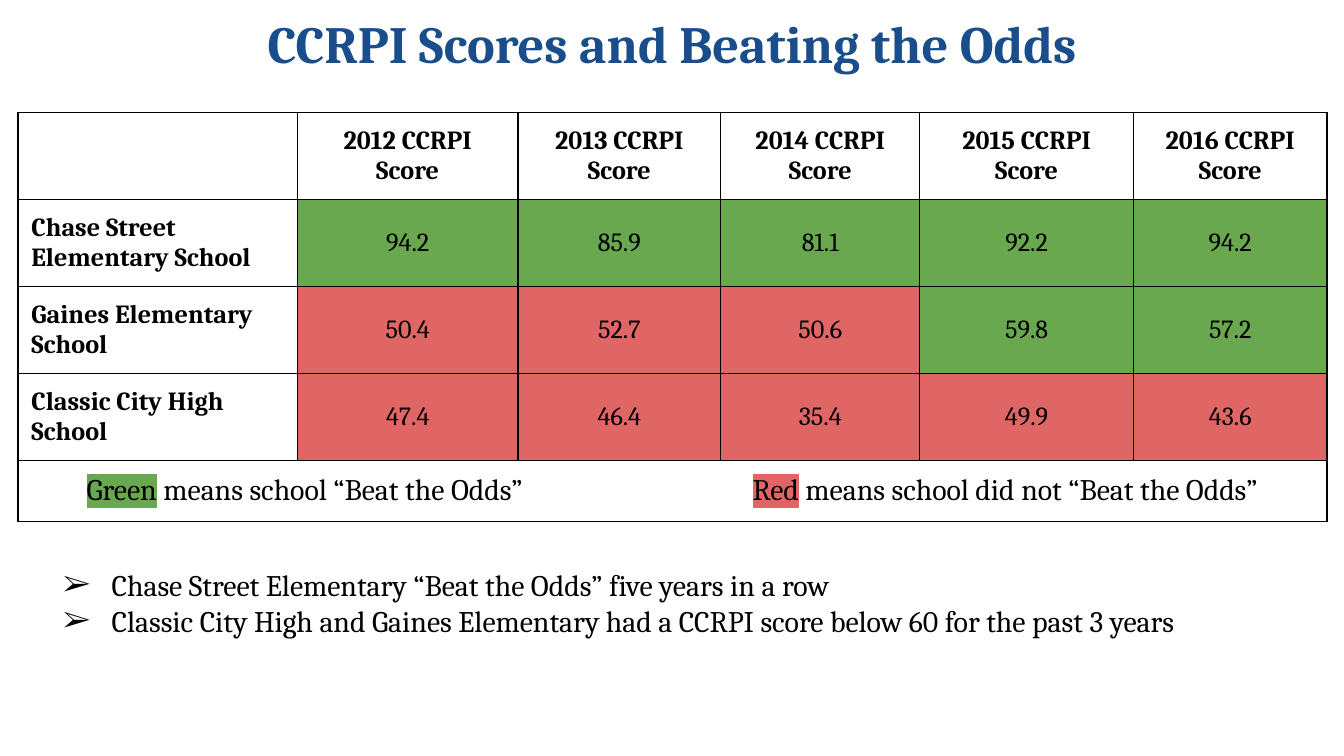
from dataclasses import dataclass

from lxml import etree
from pptx import Presentation
from pptx import util as u
from pptx.dml.color import RGBColor
from pptx.enum import text
from pptx.oxml import ns

FONT = "Cambria"
COLORS = {"title": "194D8C", "ink": "000000", "green": "6AA84F", "red": "E06666"}
INSET = u.Pt(7.2)
MIDDLE = text.MSO_ANCHOR.MIDDLE
CENTER, LEFT = text.PP_ALIGN.CENTER, text.PP_ALIGN.LEFT


@dataclass
class Style:
    size: float
    bold: bool = False
    color: str = "ink"


@dataclass
class School:
    name: str
    scores: list[float]
    beat_odds: list[bool]


@dataclass
class Legend:
    word: str
    meaning: str
    color: str


HEADING, LABEL, SCORE, NOTE = Style(28, True, "title"), Style(14, True), Style(14), Style(16)
YEARS = range(2012, 2017)
SCHOOLS = [
    School("Chase Street Elementary School", [94.2, 85.9, 81.1, 92.2, 94.2], [True] * 5),
    School("Gaines Elementary School", [50.4, 52.7, 50.6, 59.8, 57.2],
           [False, False, False, True, True]),
    School("Classic City High School", [47.4, 46.4, 35.4, 49.9, 43.6], [False] * 5),
]
LEGENDS = [
    Legend("Green", " means school “Beat the Odds”", "green"),
    Legend("Red", " means school did not “Beat the Odds”", "red"),
]
POINTS = [
    "Chase Street Elementary “Beat the Odds” five years in a row",
    "Classic City High and Gaines Elementary had a CCRPI score below 60 for the past 3 years",
]


def add_node(parent, tag: str, **attributes: str):
    return etree.SubElement(parent, ns.qn(tag), attributes)


def add_span(para, words: str, style: Style, highlight: str | None = None) -> None:
    span = para.add_run()
    span.text = words
    span.font.size = u.Pt(style.size)
    span.font.bold = style.bold
    span.font.name = FONT
    span.font.color.rgb = RGBColor.from_string(COLORS[style.color])
    if highlight:
        mark = etree.Element(ns.qn("a:highlight"))
        add_node(mark, "a:srgbClr", val=COLORS[highlight])
        span.font._element.find(ns.qn("a:solidFill")).addnext(mark)


def place(box, left: float, top: float, width: float, height: float, anchor):
    """Move a placeholder and return its text frame."""
    box.left, box.top, box.width, box.height = map(u.Pt, (left, top, width, height))
    frame = box.text_frame
    frame.word_wrap = True
    frame.auto_size = text.MSO_AUTO_SIZE.NONE
    frame.vertical_anchor = anchor
    frame.margin_left = frame.margin_right = INSET
    frame.margin_top = frame.margin_bottom = INSET
    return frame


def format_cell(cell, fill: str | None = None) -> None:
    cell.vertical_anchor = MIDDLE
    cell.margin_left = cell.margin_right = INSET
    cell.margin_top = cell.margin_bottom = INSET
    if fill:
        cell.fill.solid()
        cell.fill.fore_color.rgb = RGBColor.from_string(COLORS[fill])
    else:
        cell.fill.background()
    properties = cell._tc.get_or_add_tcPr()
    for index, side in enumerate(("a:lnL", "a:lnR", "a:lnT", "a:lnB")):
        line = etree.Element(ns.qn(side), w=str(u.Pt(0.75)))
        add_node(add_node(line, "a:solidFill"), "a:srgbClr", val=COLORS["ink"])
        properties.insert(index, line)


def fill_cell(cell, words: str, style: Style, align, fill: str | None = None) -> None:
    format_cell(cell, fill)
    para = cell.text_frame.paragraphs[0]
    para.alignment = align
    if words:
        add_span(para, words, style)


def add_legend(cell) -> None:
    cell.margin_left = u.Pt(36.8)
    para = cell.text_frame.paragraphs[0]
    para.alignment = LEFT
    tabs = add_node(para._p.get_or_add_pPr(), "a:tabLst")
    add_node(tabs, "a:tab", pos=str(u.Pt(356.8)), algn="l")
    for index, legend in enumerate(LEGENDS):
        if index:
            add_span(para, "\t", NOTE)
        add_span(para, legend.word, NOTE, legend.color)
        add_span(para, legend.meaning, NOTE)


def add_point(para, words: str) -> None:
    properties = para._p.get_or_add_pPr()
    properties.set("marL", str(u.Pt(36)))
    properties.set("indent", str(-u.Pt(26)))
    add_node(add_node(properties, "a:buClr"), "a:srgbClr", val=COLORS["ink"])
    add_node(properties, "a:buFont", typeface=FONT)
    add_node(properties, "a:buChar", char="➢")
    para.space_before = u.Pt(0)
    para.alignment = LEFT
    add_span(para, words, NOTE)


def add_score_table(page) -> None:
    widths = [149.8, 118.1, 108.7, 106.6, 114.5, 103.7]
    heights = [42.5] * (1 + len(SCHOOLS)) + [29.5]
    table = page.shapes.add_table(
        len(heights), len(widths), u.Pt(9.6), u.Pt(60.2),
        u.Pt(sum(widths)), u.Pt(sum(heights))).table
    table.first_row = table.horz_banding = False
    for column, width in zip(table.columns, widths):
        column.width = u.Pt(width)
    for row, height in zip(table.rows, heights):
        row.height = u.Pt(height)

    # Year headings
    fill_cell(table.cell(0, 0), "", LABEL, LEFT)
    for column, year in enumerate(YEARS, 1):
        fill_cell(table.cell(0, column), f"{year} CCRPI Score", LABEL, CENTER)

    # One row per school
    for row, school in enumerate(SCHOOLS, 1):
        fill_cell(table.cell(row, 0), school.name, LABEL, LEFT)
        for column, (score, beat) in enumerate(zip(school.scores, school.beat_odds), 1):
            fill_cell(table.cell(row, column), f"{score:.1f}", SCORE, CENTER,
                      "green" if beat else "red")

    # Legend across the last row
    last = len(heights) - 1
    for column in range(len(widths)):
        format_cell(table.cell(last, column))
    table.cell(last, 0).merge(table.cell(last, len(widths) - 1))
    add_legend(table.cell(last, 0))


def main() -> None:
    deck = Presentation()
    deck.slide_width, deck.slide_height = u.Pt(720), u.Pt(405)
    page = deck.slides.add_slide(deck.slide_layouts[1])

    # Title
    title = place(page.shapes.title, 0, 0, 720, 45.4, MIDDLE).paragraphs[0]
    title.alignment = CENTER
    add_span(title, "CCRPI Scores and Beating the Odds", HEADING)

    add_score_table(page)

    # Takeaways
    body = place(page.placeholders[1], 16.6, 296.6, 686.9, 38.9, text.MSO_ANCHOR.TOP)
    for index, point in enumerate(POINTS):
        add_point(body.add_paragraph() if index else body.paragraphs[0], point)

    deck.save("out.pptx")


if __name__ == "__main__":
    main()
